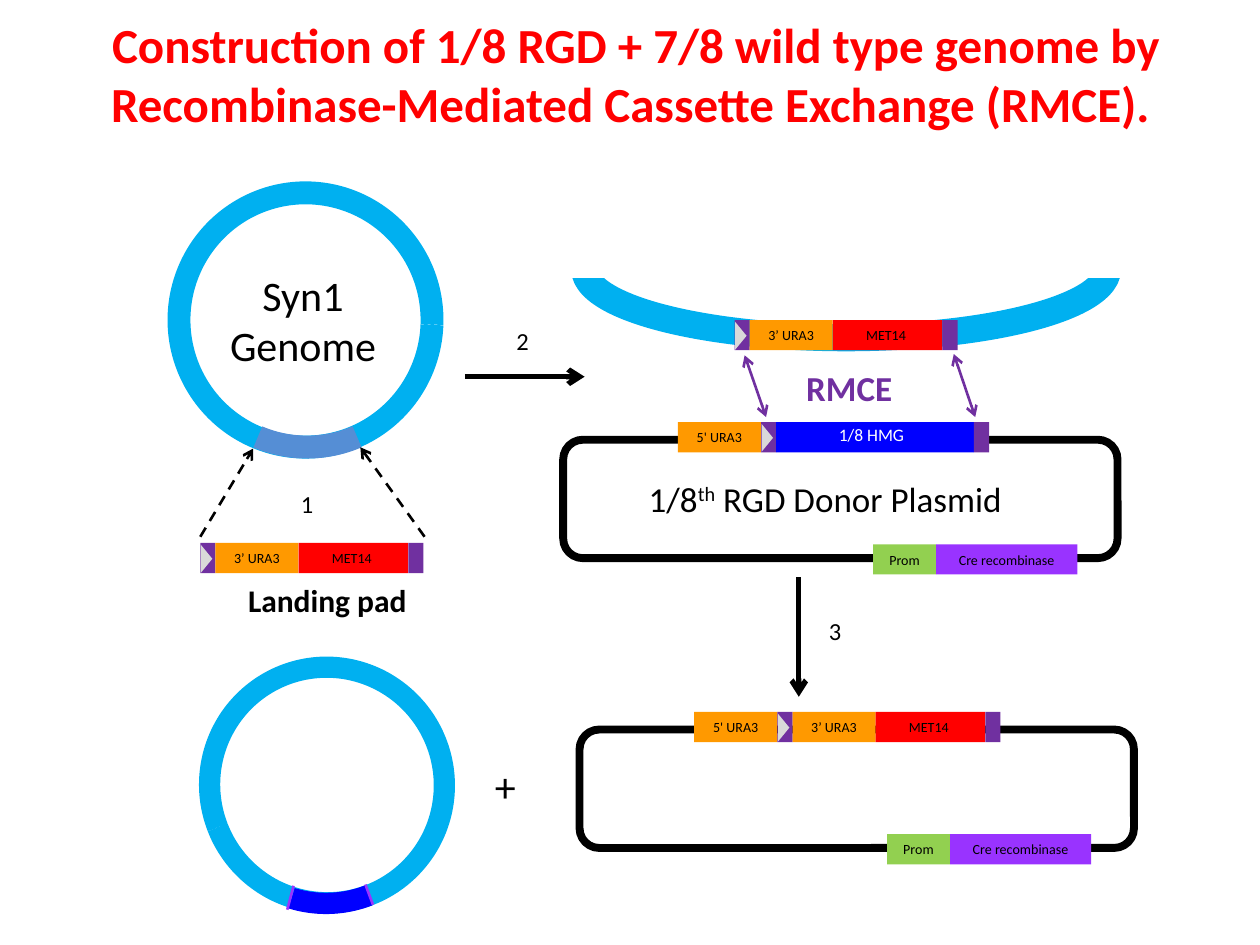
from lxml.etree import SubElement
from pptx import Presentation
from pptx.dml.color import RGBColor
from pptx.enum.dml import MSO_LINE
from pptx.enum.shapes import MSO_CONNECTOR, MSO_SHAPE
from pptx.enum.text import MSO_ANCHOR, PP_ALIGN
from pptx.oxml.ns import qn
from pptx.util import Inches, Pt

COLORS = {
    "black": "000000", "white": "FFFFFF", "red": "FF0000", "sky": "00B0F0",
    "steel": "558ED5", "purple": "7030A0", "violet": "9933FF", "grey": "D9D9D9",
    "orange": "FF9900", "blue": "0000FF", "green": "92D050",
}
TITLE = ("Construction of 1/8 RGD + 7/8 wild type genome by "
         "Recombinase-Mediated Cassette Exchange (RMCE). ")
FULL_RING = (1.344, 1.242, 0.083)
RINGS = [  # place, rotation, adjustments, colour
    ((1.33, 1.44, 2.19, 2.2), 0, FULL_RING, "sky"),
    ((1.34, 1.44, 2.19, 2.2), 156.9, (161.888, 189.496, 0.083), "steel"),
    ((1.58, 5.21, 2.03, 2.04), 156.6, FULL_RING, "sky"),
    ((1.57, 5.22, 2.04, 2.03), 105.1, (194.278, 1.242, 0.083), "blue"),
]
PLASMIDS = [(4.47, 3.49), (4.6, 5.79)]
SITE = ("", 0.12, "purple")
URA_5 = ("5' URA3", 0.66, "orange")
URA_3 = ("3’ URA3", 0.66, "orange")
MET = ("MET14 ", 0.87, "red")
HMG = ("", 1.57, "blue")
PAD = [SITE, URA_3, MET, SITE]
CRE = [("Prom", 0.5, "green"), ("Cre recombinase", 1.12, "violet")]
CASSETTES = [
    (1.59, 4.31, PAD),
    (5.83, 2.54, PAD),
    (5.38, 3.35, [URA_5, SITE, HMG, SITE]),
    (5.51, 5.65, [URA_5] + PAD),
    (6.93, 4.32, CRE),
    (7.04, 6.62, CRE),
]
LINES = [
    ((1.59, 4.26), (2.01, 3.56), dict(dash=True, tail=True)),
    ((3.37, 4.26), (2.86, 3.55), dict(dash=True, tail=True)),
    ((3.69, 2.99), (4.64, 2.99), dict(width=3, tail=True)),
    ((6.34, 4.58), (6.34, 5.53), dict(width=3, tail=True)),
    ((5.91, 2.82), (6.08, 3.31), dict(color="purple", head=True, tail=True)),
    ((7.57, 2.81), (7.74, 3.31), dict(color="purple", head=True, tail=True)),
    ((2.33, 7.03), (2.28, 7.22), dict(color="violet")),
    ((2.9, 7.02), (2.96, 7.18), dict(color="violet")),
]
LABELS = [
    ("1", (2.29, 3.83, 0.3, 0.34), dict(size=14, wrap=False)),
    ("2", (4, 2.54, 0.3, 0.34), dict(size=14, wrap=False)),
    ("3", (6.48, 4.84, 0.3, 0.34), dict(size=14, wrap=False)),
    ("+", (3.83, 5.99, 0.37, 0.5), dict(size=24, wrap=False)),
    ("1/8 HMG", (6.56, 3.32, 0.73, 0.27), dict(size=10, color="white", wrap=False)),
    (("1/8", "th", " RGD Donor Plasmid"), (5.05, 3.74, 3.16, 0.44), dict(size=20)),
    ("RMCE", (6.3, 2.86, 0.95, 0.44), dict(size=20, color="purple", bold=True)),
    ("Landing pad", (1.87, 4.56, 1.65, 0.4), dict(size=18, bold=True)),
    ("Syn1 Genome", (1.66, 2.09, 1.49, 0.91), dict(size=24, align=PP_ALIGN.CENTER)),
]


def rgb(name):
    return RGBColor.from_string(COLORS[name])


def inches(values):
    return [Inches(value) for value in values]


def write(shape, text, size=8, color="black", bold=False, wrap=True,
          align=PP_ALIGN.LEFT, anchor=MSO_ANCHOR.TOP):
    """Fill a shape with text; in a tuple, the second part is superscript."""
    frame = shape.text_frame
    frame.word_wrap = wrap
    frame.vertical_anchor = anchor
    para = frame.paragraphs[0]
    para.alignment = align
    for index, part in enumerate([text] if isinstance(text, str) else text):
        span = para.add_run()
        span.text = part
        span.font.name = "Calibri"
        span.font.size = Pt(size)
        span.font.bold = bold
        span.font.color.rgb = rgb(color)
        if index == 1:
            span.font._element.set("baseline", "30000")


def add_shape(page, kind, place, fill=None, line=None, width=1, rotation=0):
    shape = page.shapes.add_shape(kind, *inches(place))
    shape.shadow.inherit = False
    shape.rotation = rotation
    if fill:
        shape.fill.solid()
        shape.fill.fore_color.rgb = rgb(fill)
    else:
        shape.fill.background()
    if line:
        shape.line.color.rgb = rgb(line)
        shape.line.width = Pt(width)
    else:
        shape.line.fill.background()
    return shape


def add_line(page, start, end, color="black", width=1.5, dash=False,
             head=False, tail=False):
    line = page.shapes.add_connector(MSO_CONNECTOR.STRAIGHT, *inches(start + end))
    line.line.color.rgb = rgb(color)
    line.line.width = Pt(width)
    if dash:
        line.line.dash_style = MSO_LINE.DASH
    outline = line.line._get_or_add_ln()
    for tag, wanted in (("a:headEnd", head), ("a:tailEnd", tail)):
        if wanted:
            SubElement(outline, qn(tag), type="arrow")
    SubElement(line._element.spPr, qn("a:effectLst"))


def add_cassette(page, left, top, segments):
    notched = False
    for text, width, color in segments:
        box = add_shape(page, MSO_SHAPE.RECTANGLE, (left, top, width, 0.24), color)
        if text:
            write(box, text, wrap=False, align=PP_ALIGN.CENTER, anchor=MSO_ANCHOR.MIDDLE)
        if color == "purple" and not notched:
            add_shape(page, MSO_SHAPE.ISOSCELES_TRIANGLE,
                      (left - 0.06, top + 0.08, 0.22, 0.09), "grey", rotation=90)
            notched = True
        left += width


def main():
    deck = Presentation()
    deck.slide_width, deck.slide_height = Inches(10), Inches(7.5)
    page = deck.slides.add_slide(deck.slide_layouts[5])
    title = page.shapes.title
    title.left, title.top, title.width, title.height = inches((0.42, -0.17, 9.25, 1.5))
    write(title, TITLE, size=28, color="red", bold=True,
          align=PP_ALIGN.CENTER, anchor=MSO_ANCHOR.MIDDLE)

    for place, rotation, adjustments, color in RINGS:
        ring = add_shape(page, MSO_SHAPE.BLOCK_ARC, place, color, rotation=rotation)
        for index, value in enumerate(adjustments):
            ring.adjustments[index] = value
    for corner in PLASMIDS:
        add_shape(page, MSO_SHAPE.ROUNDED_RECTANGLE, corner + (4.4, 0.94),
                  line="black", width=4.5)
    add_shape(page, MSO_SHAPE.OVAL, (4.64, 1.59, 4.15, 1.09), line="sky", width=15.5)
    add_shape(page, MSO_SHAPE.RECTANGLE, (4.54, 1.42, 4.4, 0.77), "white", "white", 2)

    for cassette in CASSETTES:
        add_cassette(page, *cassette)
    for start, end, style in LINES:
        add_line(page, start, end, **style)
    for text, place, style in LABELS:
        write(page.shapes.add_textbox(*inches(place)), text, **style)
    deck.save("out.pptx")


if __name__ == "__main__":
    main()
